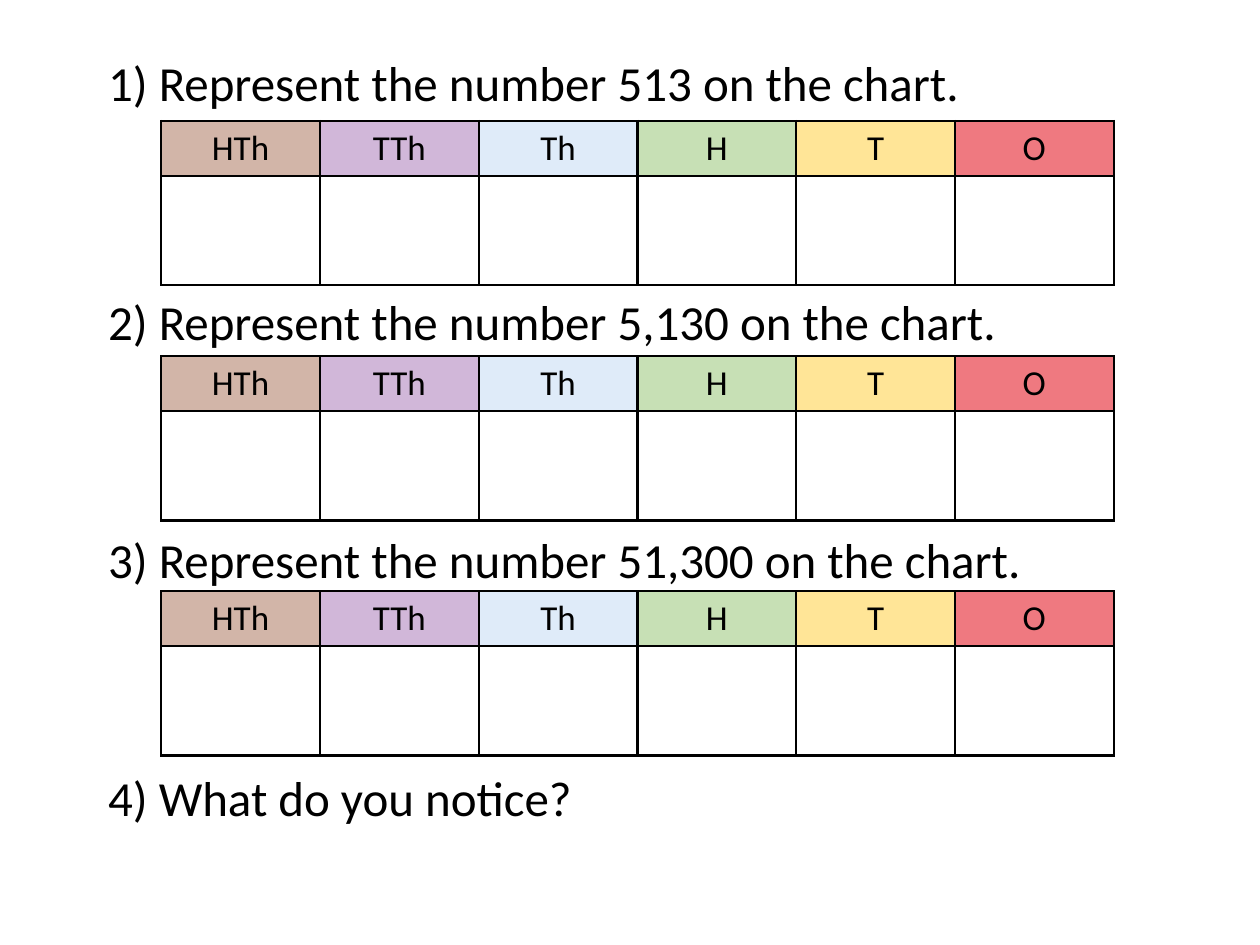
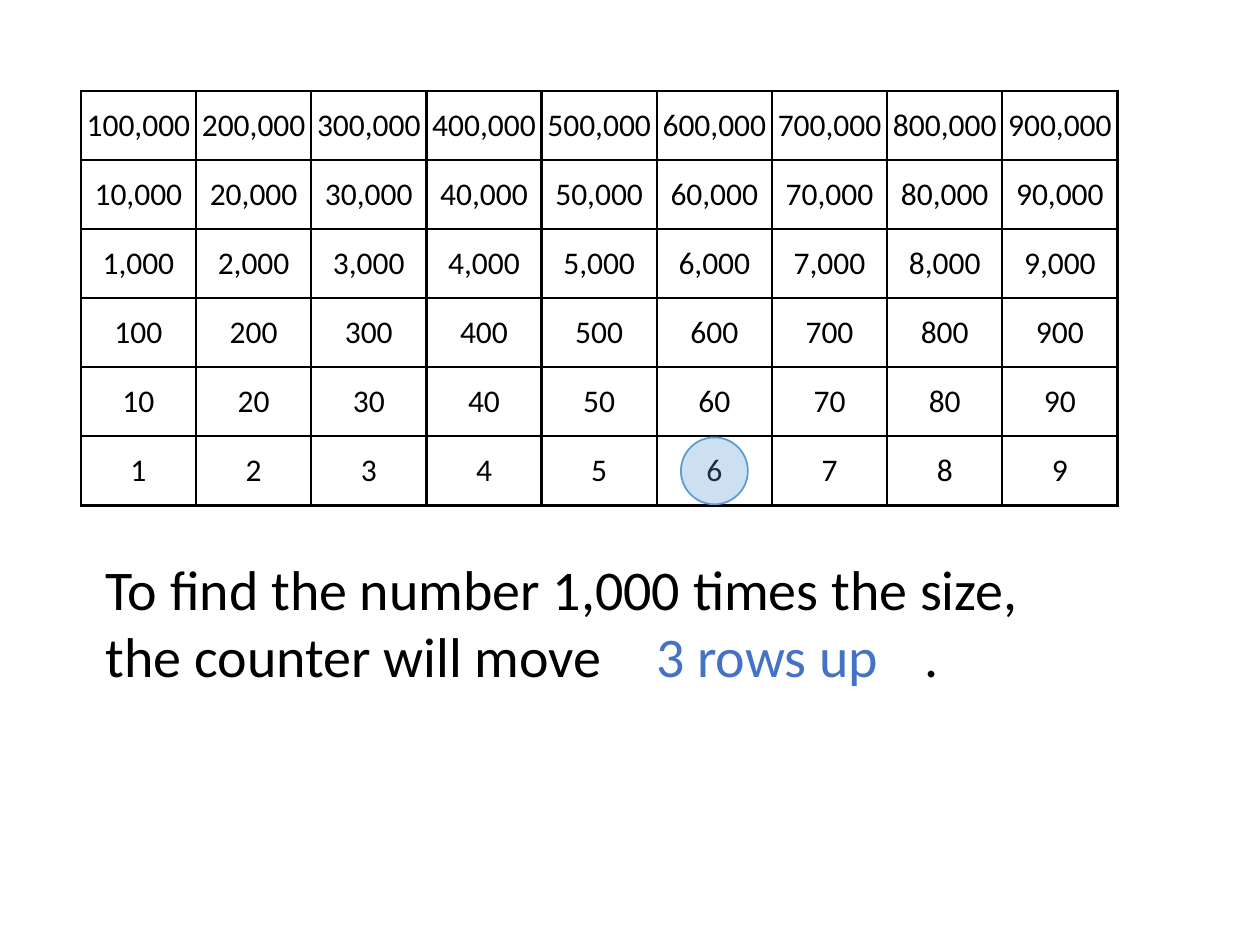
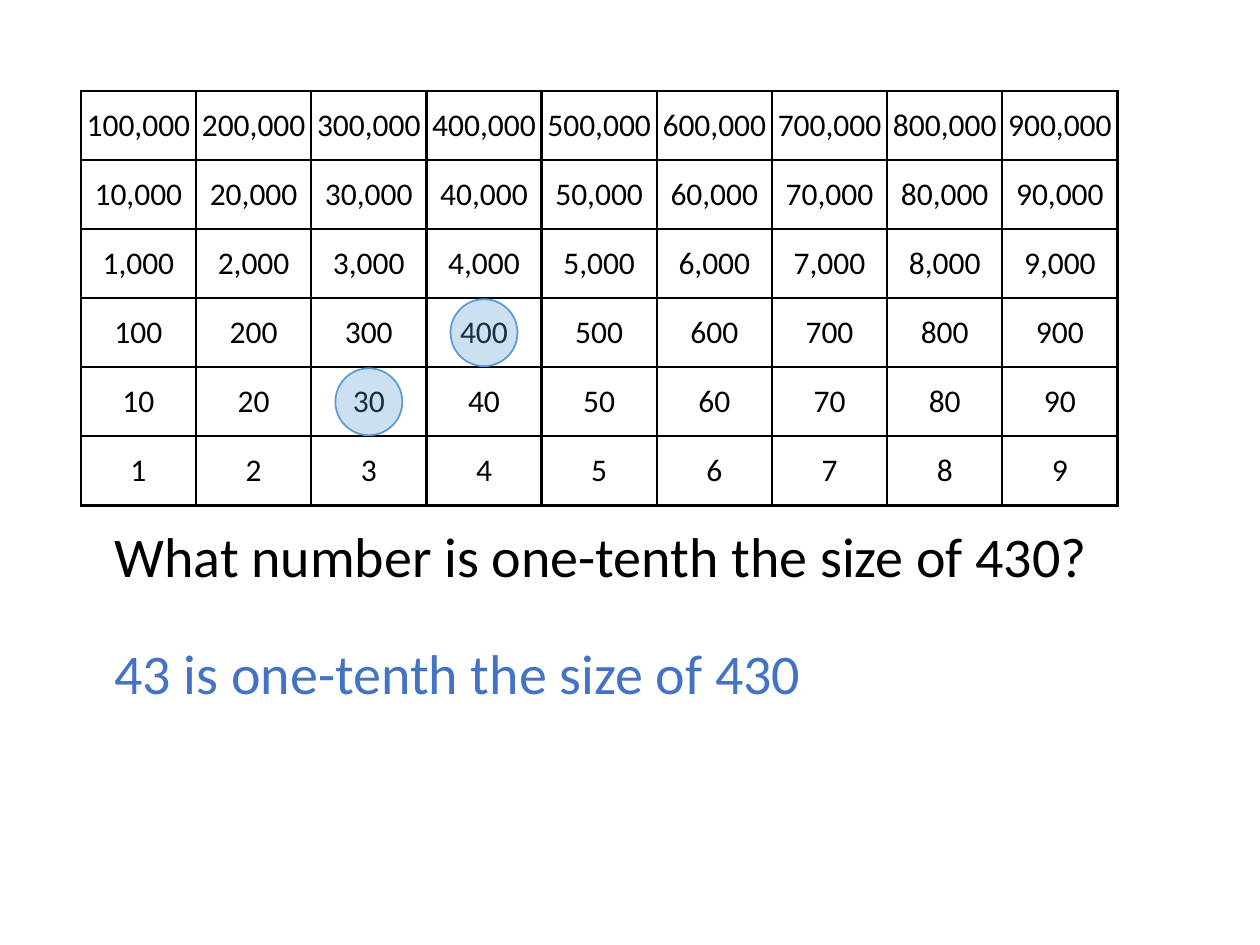
from collections import namedtuple
from dataclasses import dataclass

from lxml import etree
from pptx import Presentation
from pptx import util as u
from pptx.dml.color import RGBColor
from pptx.enum import shapes, text
from pptx.oxml.ns import qn

Box = namedtuple("Box", "left top width height")  # all in centimetres


@dataclass(frozen=True)
class Theme:
    font: str = "Calibri"
    ink: str = "000000"
    answer: str = "4472C4"
    counter: str = "5B9BD5"
    counter_opacity: int = 30
    border: float = 1.5
    counter_line: float = 1
    grid_size: int = 18
    header_size: int = 20
    question_size: int = 28
    statement_size: int = 32


THEME = Theme()
PLACES = {"HTh": "D2B5A8", "TTh": "D1B7D9", "Th": "DFEBF9",
          "H": "C7E0B5", "T": "FFE597", "O": "EF7980"}
CHART_BOX = Box(3.25, 2.44, 19.2, 3.31)
CHART_PITCH = 4.74
HEADER_HEIGHT = 1.1
GRID_BOX = Box(1.63, 1.83, 20.9, 8.36)
GRID_ROWS, GRID_COLUMNS = 6, 9
COUNTER_SIZE = 1.35


# Shared helpers
def lengths(box):
    return [u.Cm(value) for value in box]


def format_font(font, size, color=THEME.ink):
    for name, value in {"name": THEME.font, "size": u.Pt(size)}.items():
        setattr(font, name, value)
    font.color.rgb = RGBColor.from_string(color)


def add_text(slide, box, lines, size, color=THEME.ink, gap=0, tab_stop=None):
    frame = slide.shapes.add_textbox(*lengths(box)).text_frame
    frame.word_wrap = True
    frame.auto_size = text.MSO_AUTO_SIZE.SHAPE_TO_FIT_TEXT
    for index, line in enumerate(lines):
        paragraph = frame.add_paragraph() if index else frame.paragraphs[0]
        if index:
            paragraph.space_before = u.Pt(gap)
        if tab_stop:
            tabs = etree.SubElement(paragraph._p.get_or_add_pPr(), qn("a:tabLst"))
            etree.SubElement(tabs, qn("a:tab"), pos=str(u.Cm(tab_stop)), algn="l")
        run = paragraph.add_run()
        run.text = line
        format_font(run.font, size, color)


def add_borders(cell):
    properties = cell._tc.get_or_add_tcPr()
    for side in ("lnL", "lnR", "lnT", "lnB"):
        line = etree.SubElement(properties, qn(f"a:{side}"), w=str(u.Pt(THEME.border)))
        fill = etree.SubElement(line, qn("a:solidFill"))
        etree.SubElement(fill, qn("a:srgbClr"), val=THEME.ink)


def add_plain_table(slide, box, row_heights, columns):
    table = slide.shapes.add_table(len(row_heights), columns, *lengths(box)).table
    for flag in ("first_row", "horz_banding"):
        setattr(table, flag, False)
    for column in table.columns:
        column.width = u.Cm(box.width / columns)
    for row, height in zip(table.rows, row_heights):
        row.height = u.Cm(height)
    for cell in table.iter_cells():
        add_borders(cell)
        cell.fill.background()
    return table


def write_cell(cell, value, size):
    paragraph = cell.text_frame.paragraphs[0]
    paragraph.alignment = text.PP_ALIGN.CENTER
    run = paragraph.add_run()
    run.text = value
    format_font(run.font, size)


# Regions
def add_place_value_chart(slide, box):
    heights = [HEADER_HEIGHT, box.height - HEADER_HEIGHT]
    table = add_plain_table(slide, box, heights, len(PLACES))
    for column, (place, color) in enumerate(PLACES.items()):
        cell = table.cell(0, column)
        cell.fill.solid()
        cell.fill.fore_color.rgb = RGBColor.from_string(color)
        write_cell(cell, place, THEME.header_size)


def add_gattegno_grid(slide, box):
    heights = [box.height / GRID_ROWS] * GRID_ROWS
    table = add_plain_table(slide, box, heights, GRID_COLUMNS)
    for row in range(GRID_ROWS):
        for column in range(GRID_COLUMNS):
            cell = table.cell(row, column)
            cell.vertical_anchor = text.MSO_ANCHOR.MIDDLE
            for side in ("left", "right", "top", "bottom"):
                setattr(cell, f"margin_{side}", 0)
            number = (column + 1) * 10 ** (GRID_ROWS - 1 - row)
            write_cell(cell, f"{number:,}", THEME.grid_size)


def add_counter(slide, box, number):
    """Centre a see-through counter on the grid cell that holds the number."""
    digits = str(number)
    column, row = int(digits[0]) - 1, GRID_ROWS - len(digits)
    left = box.left + (column + 0.5) * box.width / GRID_COLUMNS - COUNTER_SIZE / 2
    top = box.top + (row + 0.5) * box.height / GRID_ROWS - COUNTER_SIZE / 2
    counter = slide.shapes.add_shape(
        shapes.MSO_SHAPE.OVAL, *lengths(Box(left, top, COUNTER_SIZE, COUNTER_SIZE)))
    counter.shadow.inherit = False
    color = RGBColor.from_string(THEME.counter)
    counter.fill.solid()
    counter.fill.fore_color.rgb = color
    counter.line.color.rgb = color
    counter.line.width = u.Pt(THEME.counter_line)
    fill_color = counter._element.spPr.find(qn("a:solidFill"))[0]
    etree.SubElement(fill_color, qn("a:alpha"), val=str(THEME.counter_opacity * 1000))


# Slides
def build_chart_slide(slide):
    numbers = (513, 5130, 51300)
    questions = [f"Represent the number {number:,} on the chart." for number in numbers]
    questions.append("What do you notice?")
    lines = [f"{index}) {question}" for index, question in enumerate(questions, 1)]
    add_text(slide, Box(1.93, 0.94, 20.83, 15.82), lines, THEME.question_size, gap=102.5)
    for index in range(len(numbers)):
        add_place_value_chart(
            slide, CHART_BOX._replace(top=CHART_BOX.top + index * CHART_PITCH))


def build_times_slide(slide):
    add_gattegno_grid(slide, GRID_BOX)
    add_text(slide, Box(1.88, 11.05, 20.52, 3),
             ["To find the number 1,000 times the size, the counter will move \t."],
             THEME.statement_size, tab_stop=16.5)
    add_text(slide, Box(12.98, 12.4, 7.01, 1.63), ["3 rows up"],
             THEME.statement_size, THEME.answer)
    add_counter(slide, GRID_BOX, 6)


def build_tenth_slide(slide):
    question_box = Box(2.06, 10.39, 20.52, 1.63)
    add_text(slide, question_box, ["What number is one-tenth the size of 430?"],
             THEME.statement_size)
    add_gattegno_grid(slide, GRID_BOX)
    for number in (400, 30):
        add_counter(slide, GRID_BOX, number)
    add_text(slide, question_box._replace(top=12.75),
             ["43 is one-tenth the size of 430"], THEME.statement_size, THEME.answer)


def main():
    presentation = Presentation()
    presentation.slide_width, presentation.slide_height = u.Cm(25.4), u.Cm(19.05)
    blank = presentation.slide_layouts.get_by_name("Blank")
    for build in (build_chart_slide, build_times_slide, build_tenth_slide):
        build(presentation.slides.add_slide(blank))
    presentation.save("out.pptx")


if __name__ == "__main__":
    main()
